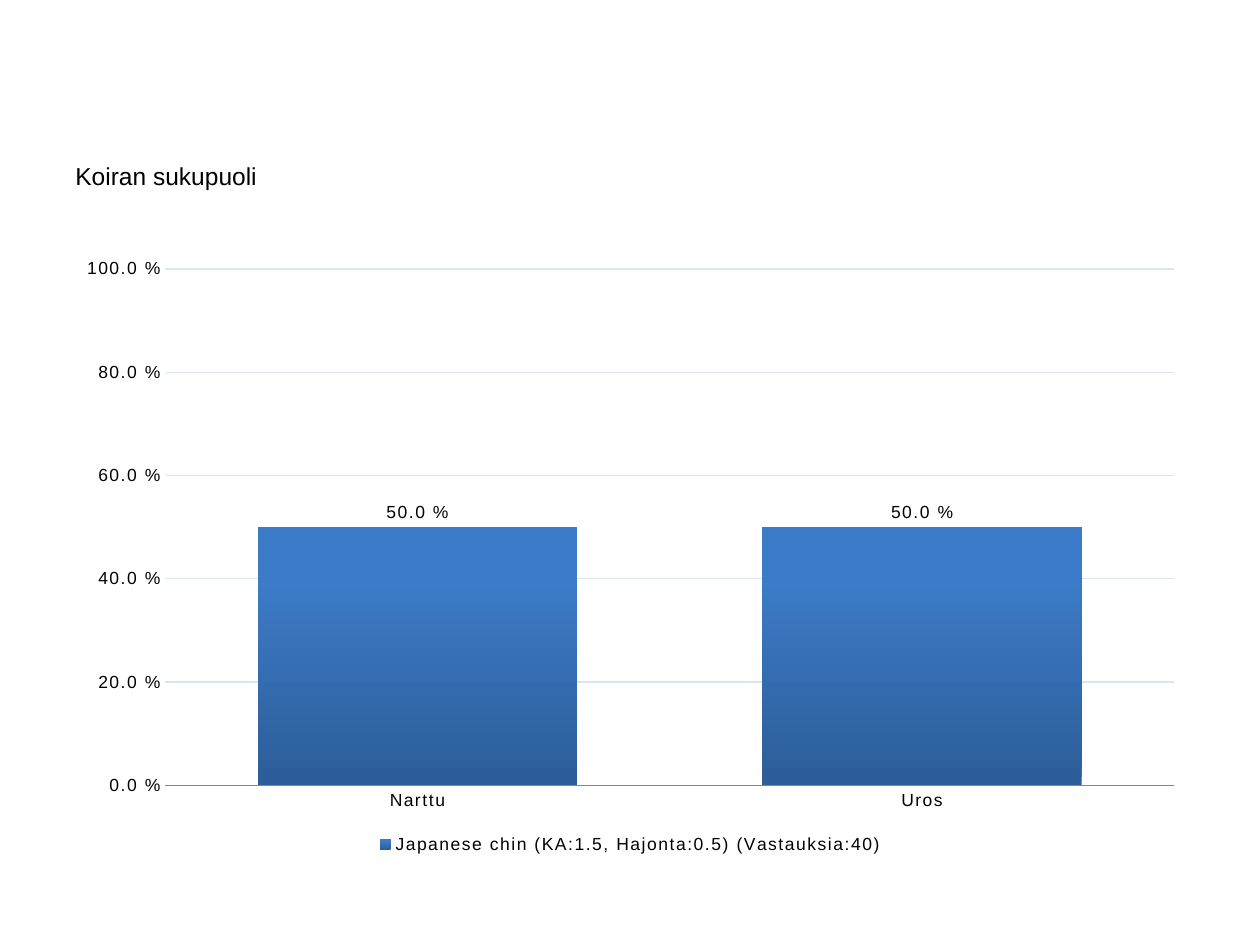
from lxml.etree import SubElement
from pptx import Presentation
from pptx.chart.data import CategoryChartData
from pptx.dml.color import RGBColor
from pptx.enum.chart import XL_CHART_TYPE, XL_LABEL_POSITION, XL_LEGEND_POSITION, XL_TICK_MARK
from pptx.oxml.ns import qn
from pptx.util import Inches, Pt

# Content
QUESTION = "Koiran sukupuoli"
BREED = "Japanese chin (KA:1.5, Hajonta:0.5) (Vastauksia:40)"
SHARES = {"Narttu": 0.5, "Uros": 0.5}
PERCENT = r"0.0\ %"
BAR_STOPS = [(0, "2C5D98"), (0.8, "3C7BC7")]
PLOT_AREA = {"x": 0.09, "y": 0.04, "w": 0.89, "h": 0.84}
LEFT, WIDTH = Inches(0.5), Inches(9)


def color(hex_string):
    return RGBColor.from_string(hex_string)


def style_font(font, size):
    font.name = "Arial"
    font.size = Pt(size)
    font.color.rgb = color("000000")


def style_chart_text(part):
    style_font(part.font, 10)
    part.font._element.set("spc", "100")  # letter spacing of 1 pt


def add_question(slide):
    question = slide.shapes.add_textbox(LEFT, Inches(1.23), WIDTH, Inches(0.59)).text_frame
    question.word_wrap = True
    question.text = QUESTION
    style_font(question.paragraphs[0].font, 14)


def place_plot_area(chart):
    plot_area = chart._chartSpace.chart.plotArea
    for old in plot_area.findall(qn("c:layout")):
        plot_area.remove(old)
    layout = SubElement(plot_area, qn("c:layout"))
    plot_area.insert(0, layout)
    manual = SubElement(layout, qn("c:manualLayout"))
    settings = {"layoutTarget": "inner", "xMode": "edge", "yMode": "edge", **PLOT_AREA}
    for tag, value in settings.items():
        SubElement(manual, qn(f"c:{tag}")).set("val", str(value))


def add_share_chart(slide):
    data = CategoryChartData(number_format=PERCENT)
    data.categories = list(SHARES)
    data.add_series(BREED, list(SHARES.values()))
    chart = slide.shapes.add_chart(
        XL_CHART_TYPE.COLUMN_CLUSTERED, LEFT, Inches(1.94), WIDTH, Inches(4.88), data
    ).chart
    chart.has_title = False
    place_plot_area(chart)

    # Axes
    answers, shares = chart.category_axis, chart.value_axis
    for axis in (answers, shares):
        axis.major_tick_mark = axis.minor_tick_mark = XL_TICK_MARK.NONE
        style_chart_text(axis.tick_labels)
    answers.format.line.color.rgb = color("868686")
    answers.format.line.width = Pt(0.75)
    shares.minimum_scale, shares.maximum_scale, shares.major_unit = 0, 1, 0.2
    shares.tick_labels.number_format = PERCENT
    shares.tick_labels.number_format_is_linked = False
    shares.format.line.fill.background()
    shares.major_gridlines.format.line.color.rgb = color("DCE6F2")
    shares.major_gridlines.format.line.width = Pt(0.75)

    # Bars, darker towards the foot
    bars = chart.plots[0]
    bars.gap_width = 58
    bars.vary_by_categories = False
    fill = bars.series[0].format.fill
    fill.gradient()
    fill.gradient_angle = 90
    for stop, (position, shade) in zip(fill.gradient_stops, BAR_STOPS):
        stop.position = position
        stop.color.rgb = color(shade)

    # Value labels and legend
    labels = bars.series[0].data_labels
    labels.show_value = True
    labels.number_format = PERCENT
    labels.number_format_is_linked = False
    labels.position = XL_LABEL_POSITION.OUTSIDE_END
    style_chart_text(labels)
    chart.has_legend = True
    chart.legend.position = XL_LEGEND_POSITION.BOTTOM
    chart.legend.include_in_layout = False
    style_chart_text(chart.legend)


def main():
    presentation = Presentation()
    presentation.slide_width, presentation.slide_height = Inches(10), Inches(7.5)
    slide = presentation.slides.add_slide(presentation.slide_layouts[6])
    add_question(slide)
    add_share_chart(slide)
    presentation.save("out.pptx")


if __name__ == "__main__":
    main()
